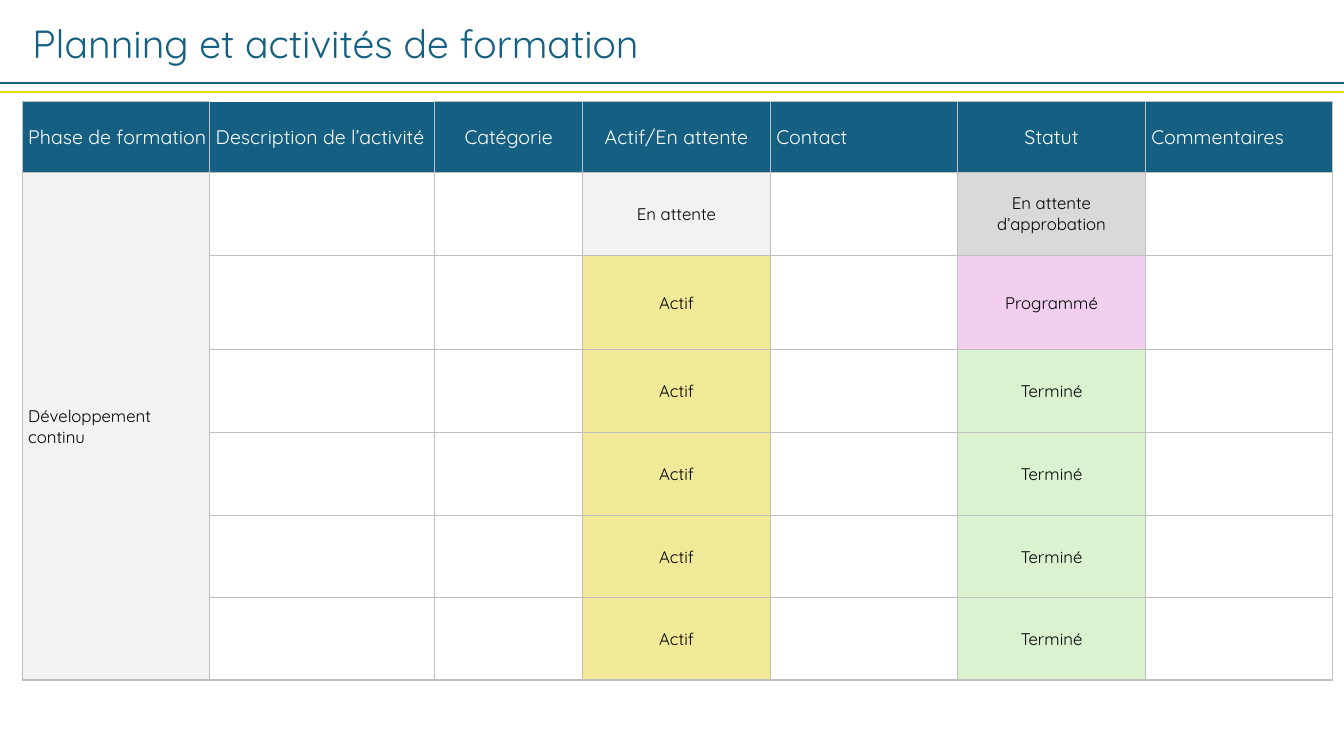
"""Build the training schedule and activities slide."""
import pptx
import pptx.util
import pptx.dml.color
import pptx.enum.shapes
import pptx.enum.text
import pptx.oxml.ns
from lxml import etree

Inches, Pt = pptx.util.Inches, pptx.util.Pt
RGBColor = pptx.dml.color.RGBColor
PP_ALIGN, MSO_ANCHOR = pptx.enum.text.PP_ALIGN, pptx.enum.text.MSO_ANCHOR
qn = pptx.oxml.ns.qn

BLUE = RGBColor(0x15, 0x60, 0x82)
YELLOW = RGBColor(0xE8, 0xDD, 0x06)
WHITE = RGBColor(0xFF, 0xFF, 0xFF)
BLACK = RGBColor(0, 0, 0)
GRID = RGBColor(0xBF, 0xBF, 0xBF)
PALE_GREY = RGBColor(0xF2, 0xF2, 0xF2)
GREY = RGBColor(0xD9, 0xD9, 0xD9)
PALE_YELLOW = RGBColor(0xF0, 0xEA, 0x98)
PINK = RGBColor(0xF2, 0xCE, 0xEF)
GREEN = RGBColor(0xDA, 0xF2, 0xD0)

FONT = "Quicksand"
TITLE = "Planning et activités de formation"
PHASE = "Développement continu"
COLUMNS = [
    ("Phase de formation", 1.86, PP_ALIGN.LEFT),
    ("Description de l’activité", 2.23, PP_ALIGN.LEFT),
    ("Catégorie", 1.47, PP_ALIGN.CENTER),
    ("Actif/En attente", 1.86, PP_ALIGN.CENTER),
    ("Contact", 1.86, PP_ALIGN.LEFT),
    ("Statut", 1.86, PP_ALIGN.CENTER),
    ("Commentaires", 1.86, PP_ALIGN.LEFT),
]
ACTIVITIES = [
    ("En attente", "En attente d’approbation"),
    ("Actif", "Programmé"),
] + [("Actif", "Terminé")] * 4
ROW_HEIGHTS = [0.7, 0.82, 0.94, 0.82, 0.82, 0.82, 0.82]
FILLS = {
    PHASE: PALE_GREY,
    "En attente": PALE_GREY,
    "Actif": PALE_YELLOW,
    "En attente d’approbation": GREY,
    "Programmé": PINK,
    "Terminé": GREEN,
}
RULES = [(0.82, BLUE), (0.91, YELLOW)]


def style_runs(paragraph, size, color):
    """Apply the slide font to every run of a paragraph."""
    for run in paragraph.runs:
        run.font.name = FONT
        run.font.size = Pt(size)
        run.font.color.rgb = color


def add_borders(cell, widths):
    """Draw the given sides of a cell, in schema order."""
    properties = cell._tc.get_or_add_tcPr()
    for side, width in widths.items():
        line = etree.SubElement(properties, qn(f"a:ln{side}"), w=str(Pt(width)))
        solid = etree.SubElement(line, qn("a:solidFill"))
        etree.SubElement(solid, qn("a:srgbClr"), val=str(GRID))


def fill_cell(cell, text, fill, size, color, align):
    """Set the fill and text of a cell."""
    if fill is None:
        cell.fill.background()
    else:
        cell.fill.solid()
        cell.fill.fore_color.rgb = fill
    cell.vertical_anchor = MSO_ANCHOR.MIDDLE
    cell.margin_left = Inches(0.06 if align == PP_ALIGN.LEFT else 0.01)
    cell.margin_right = cell.margin_top = Inches(0.01)
    cell.margin_bottom = 0
    cell.text_frame.text = text
    paragraph = cell.text_frame.paragraphs[0]
    paragraph.alignment = align
    style_runs(paragraph, size, color)


def add_title(slide):
    """Place and format the title."""
    title = slide.shapes.title
    title.left, title.top = Inches(0.22), Inches(0.14)
    title.width, title.height = Inches(8.08), Inches(0.57)
    frame = title.text_frame
    frame.text = TITLE
    frame.vertical_anchor = MSO_ANCHOR.TOP
    frame.auto_size = pptx.enum.text.MSO_AUTO_SIZE.SHAPE_TO_FIT_TEXT
    frame.paragraphs[0].alignment = PP_ALIGN.LEFT
    style_runs(frame.paragraphs[0], 28, BLUE)


def add_schedule(slide):
    """Add the schedule table."""
    rows = [[name for name, _, _ in COLUMNS]]
    rows += [[PHASE if index == 0 else "", "", "", activity, "", status, ""]
             for index, (activity, status) in enumerate(ACTIVITIES)]
    schedule = slide.shapes.add_table(
        len(rows), len(COLUMNS), Inches(0.22), Inches(1.01),
        Inches(13), Inches(sum(ROW_HEIGHTS))).table
    schedule.first_row = schedule.horz_banding = False
    for column, (_, width, _) in zip(schedule.columns, COLUMNS):
        column.width = Inches(width)
    for row, height in zip(schedule.rows, ROW_HEIGHTS):
        row.height = Inches(height)

    last = len(rows) - 1
    schedule.cell(1, 0).merge(schedule.cell(last, 0))
    for r, row in enumerate(rows):
        for c, text in enumerate(row):
            cell = schedule.cell(r, c)
            closes_table = r == last or (r == 1 and c == 0)
            widths = {"L": 0.5, "R": 0.5, "T": 0.5, "B": 1.5 if closes_table else 0.5}
            if (r, c) == (0, 1):
                del widths["T"]
            add_borders(cell, widths)
            if r == 0:
                fill_cell(cell, text, BLUE, 14, WHITE, COLUMNS[c][2])
            else:
                fill_cell(cell, text, FILLS.get(text), 12, BLACK, COLUMNS[c][2])


def add_rules(slide, slide_width):
    """Add the two full-width lines under the title."""
    for y, color in RULES:
        rule = slide.shapes.add_connector(
            pptx.enum.shapes.MSO_CONNECTOR.STRAIGHT, 0, Inches(y), slide_width, Inches(y))
        rule.line.color.rgb = color
        rule.line.width = Pt(1.5)
        etree.SubElement(rule._element.spPr, qn("a:effectLst"))


def main():
    """Assemble and save the slide."""
    deck = pptx.Presentation()
    deck.slide_width, deck.slide_height = Inches(13.33), Inches(7.5)
    slide = deck.slides.add_slide(deck.slide_layouts[5])
    add_schedule(slide)
    add_title(slide)
    add_rules(slide, deck.slide_width)
    deck.save("out.pptx")


if __name__ == "__main__":
    main()
